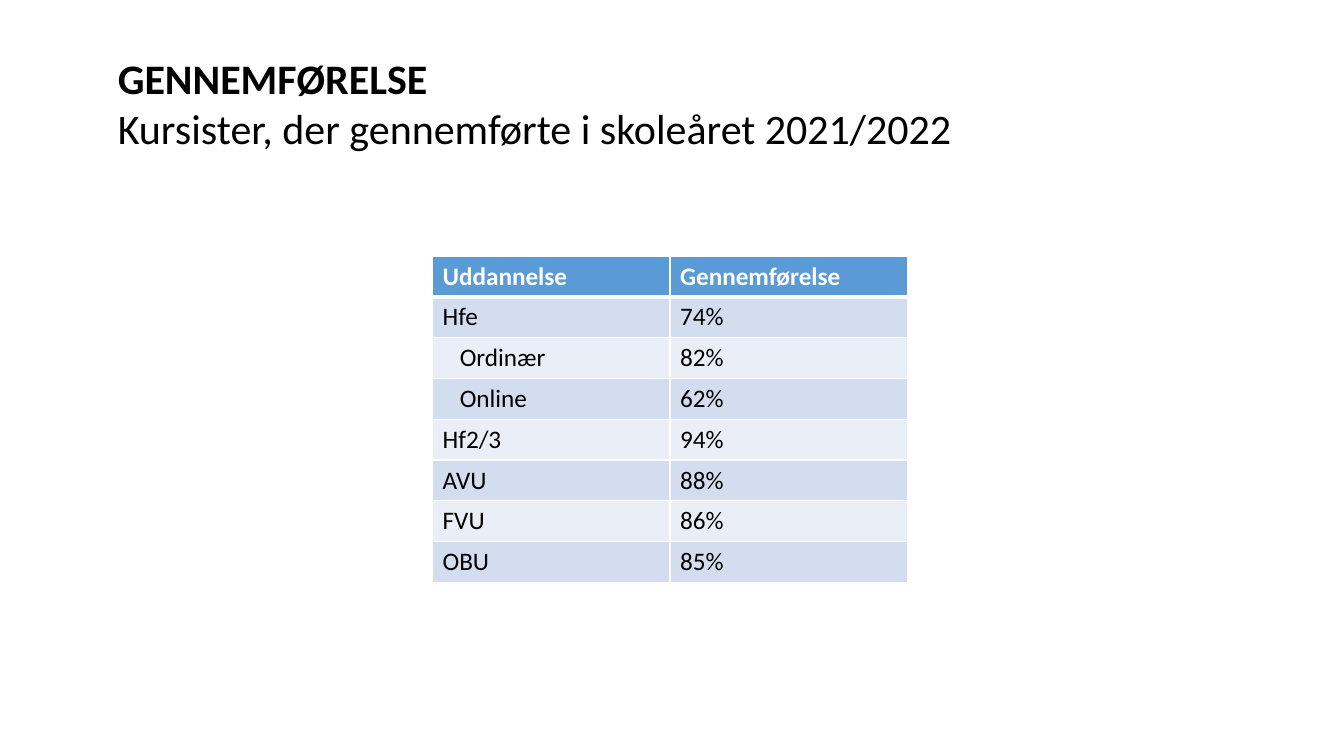
from dataclasses import dataclass

from lxml import etree
from pptx import Presentation
from pptx.dml.color import RGBColor
from pptx.enum.text import MSO_AUTO_SIZE
from pptx.oxml.ns import qn
from pptx.util import Inches, Pt

FIT_SHAPE = MSO_AUTO_SIZE.SHAPE_TO_FIT_TEXT


@dataclass(frozen=True)
class Theme:
    font: str = "Calibri"
    ink: str = "000000"
    white: str = "FFFFFF"
    header: str = "5B9BD5"
    bands: tuple[str, str] = ("D2DEEF", "EAEFF7")
    heading_size: int = 30
    table_size: int = 18
    thin_rule: int = 1
    header_rule: int = 3


@dataclass(frozen=True)
class Completion:
    programme: str
    rate: str
    is_subgroup: bool = False


THEME = Theme()
HEADING = ("GENNEMFØRELSE", "Kursister, der gennemførte i skoleåret 2021/2022")
COMPLETIONS = (
    Completion("Uddannelse", "Gennemførelse"),
    Completion("Hfe", "74%"),
    Completion("Ordinær", "82%", True),
    Completion("Online", "62%", True),
    Completion("Hf2/3", "94%"),
    Completion("AVU", "88%"),
    Completion("FVU", "86%"),
    Completion("OBU", "85%"),
)
TABLE_WIDTH = Inches(4.71)
TABLE_HEIGHT = Inches(3.24)
SUBGROUP_MARGIN = Inches(0.27)


def style_paragraph(paragraph, text: str, size: int, color: str, bold: bool) -> None:
    paragraph.text = text
    paragraph.font.name = THEME.font
    paragraph.font.size = Pt(size)
    paragraph.font.bold = bold
    paragraph.font.color.rgb = RGBColor.from_string(color)


def add_border(cell, side: str, width: int) -> None:
    properties = cell._tc.get_or_add_tcPr()
    line = etree.SubElement(properties, qn(f"a:ln{side}"), w=str(Pt(width)))
    fill = etree.SubElement(line, qn("a:solidFill"))
    etree.SubElement(fill, qn("a:srgbClr"), val=THEME.white)


def fill_cell(cell, text: str, row: int) -> None:
    is_header = row == 0
    top = THEME.header_rule if row == 1 else THEME.thin_rule
    bottom = THEME.header_rule if is_header else THEME.thin_rule
    sides = {"L": THEME.thin_rule, "R": THEME.thin_rule, "T": top, "B": bottom}
    for side, width in sides.items():
        add_border(cell, side, width)
    background = THEME.header if is_header else THEME.bands[(row - 1) % 2]
    cell.fill.solid()
    cell.fill.fore_color.rgb = RGBColor.from_string(background)
    color = THEME.white if is_header else THEME.ink
    style_paragraph(cell.text_frame.paragraphs[0], text, THEME.table_size, color, is_header)


def add_heading(slide) -> None:
    heading = slide.shapes.add_textbox(
        Inches(1.07), Inches(0.47), Inches(8.56), Inches(1.11)
    ).text_frame
    heading.word_wrap = True
    heading.auto_size = FIT_SHAPE
    title, subtitle = heading.paragraphs[0], heading.add_paragraph()
    style_paragraph(title, HEADING[0], THEME.heading_size, THEME.ink, True)
    style_paragraph(subtitle, HEADING[1], THEME.heading_size, THEME.ink, False)


def add_completion_table(slide) -> None:
    table = slide.shapes.add_table(
        len(COMPLETIONS), 2, Inches(4.29), Inches(2.54), TABLE_WIDTH, TABLE_HEIGHT
    ).table
    for row, completion in enumerate(COMPLETIONS):
        programme_cell = table.cell(row, 0)
        fill_cell(programme_cell, completion.programme, row)
        fill_cell(table.cell(row, 1), completion.rate, row)
        if completion.is_subgroup:
            programme_cell.margin_left = SUBGROUP_MARGIN


def main() -> None:
    presentation = Presentation()
    presentation.slide_width = Inches(13.33)
    presentation.slide_height = Inches(7.5)
    slide = presentation.slides.add_slide(presentation.slide_layouts[6])
    add_heading(slide)
    add_completion_table(slide)
    presentation.save("out.pptx")


if __name__ == "__main__":
    main()
